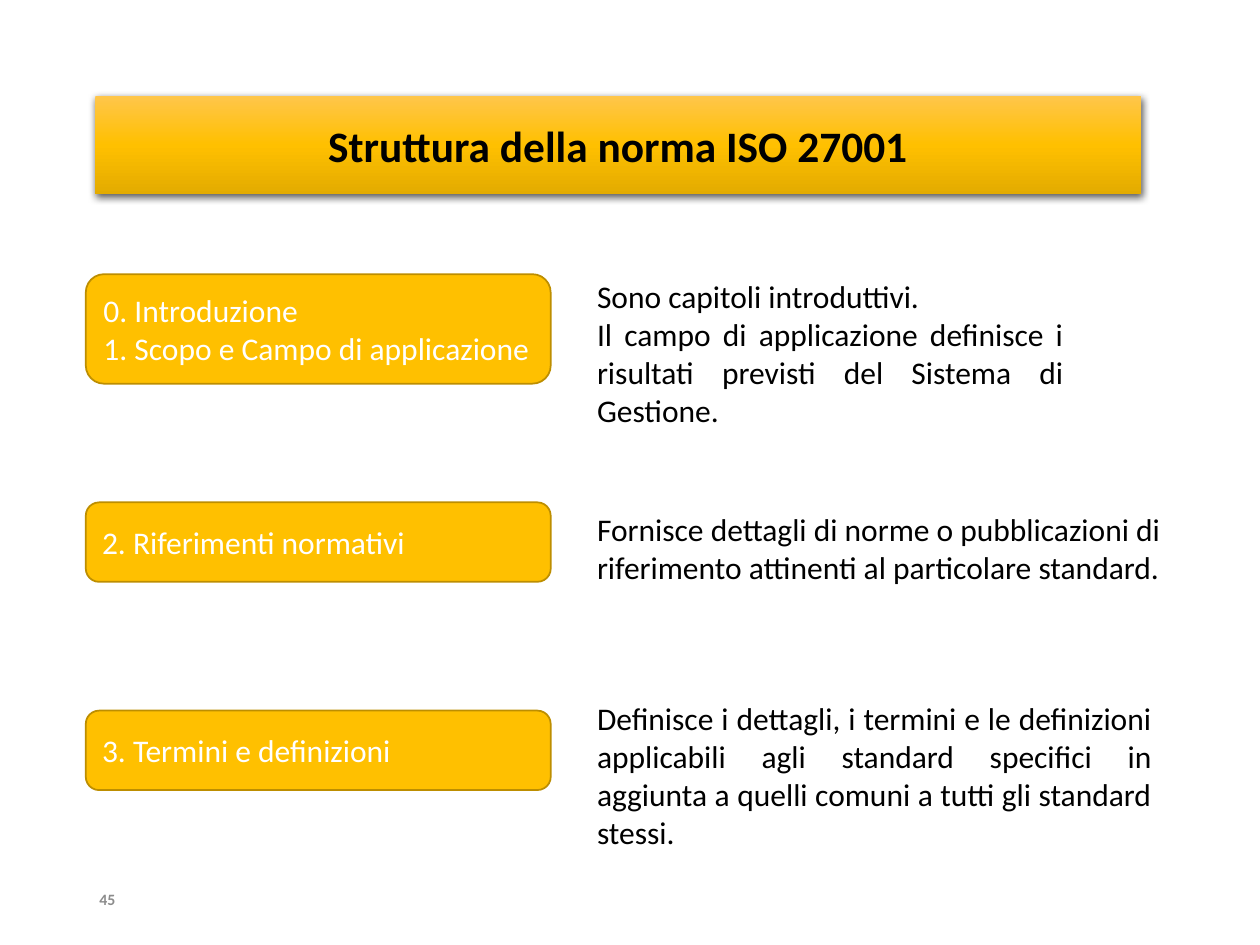
from pptx import Presentation
from pptx.dml.color import RGBColor
from pptx.enum.shapes import MSO_SHAPE
from pptx.enum.text import MSO_ANCHOR, MSO_AUTO_SIZE, PP_ALIGN
from pptx.oxml import parse_xml
from pptx.oxml.ns import nsdecls
from pptx.util import Pt

ROUNDED = MSO_SHAPE.ROUNDED_RECTANGLE
TOP, MIDDLE = MSO_ANCHOR.TOP, MSO_ANCHOR.MIDDLE
LEFT, CENTER, JUSTIFY = PP_ALIGN.LEFT, PP_ALIGN.CENTER, PP_ALIGN.JUSTIFY
NO_AUTOFIT = MSO_AUTO_SIZE.NONE

FONT = "Calibri"
AMBER, AMBER_EDGE = "FFC000", "BD8E00"
BLACK, WHITE, GRAY = "000000", "FFFFFF", "8C8C8C"
TITLE_GRADIENT = [(0, "FFC64B"), (50, AMBER), (100, "E3AB00")]

CHAPTER_LEFT, CHAPTER_WIDTH = 49, 265.7
NOTE_LEFT = 334.1

# Chapters: top, height, lines; notes: top, width, height, lines
SECTIONS = [
    ((156.7, 62.6, ["0. Introduzione", "1. Scopo e Campo di applicazione"]),
     (154.8, 280.8, 94.3, [
         "Sono capitoli introduttivi.",
         "Il campo di applicazione definisce i risultati previsti "
         "del Sistema di Gestione."])),
    ((287.1, 45.4, ["2. Riferimenti normativi"]),
     (288, 336.2, 72.7, [
         "Fornisce dettagli di norme o pubblicazioni di riferimento "
         "attinenti al particolare standard."])),
    ((406.1, 45.4, ["3. Termini e definizioni"]),
     (396, 331.2, 94.3, [
         "Definisce i dettagli, i termini e le definizioni applicabili agli "
         "standard specifici in aggiunta a quelli comuni a tutti gli "
         "standard stessi."])),
]


def color(hex_code):
    return RGBColor.from_string(hex_code)


def write(shape, lines, size=18, ink=BLACK, bold=False, align=LEFT, anchor=TOP):
    frame = shape.text_frame
    frame.word_wrap = True
    frame.auto_size = NO_AUTOFIT
    frame.vertical_anchor = anchor
    frame.text = "\n".join(lines)
    for paragraph in frame.paragraphs:
        paragraph.alignment = align
        font = paragraph.font
        font.name, font.size, font.bold = FONT, Pt(size), bold
        font.color.rgb = color(ink)


def add_title(slide, text):
    title = slide.shapes.title
    title.left, title.top, title.width, title.height = (
        Pt(54.5), Pt(54.7), Pt(597.6), Pt(56.2))
    write(title, [text], size=24.8, bold=True, align=CENTER, anchor=MIDDLE)
    # Vertical gradient and soft shadow below the banner
    stops = "".join(
        f'<a:gs pos="{position * 1000}"><a:srgbClr val="{tone}"/></a:gs>'
        for position, tone in TITLE_GRADIENT)
    properties = title.element.spPr
    properties.append(parse_xml(
        f'<a:gradFill {nsdecls("a")} rotWithShape="1"><a:gsLst>{stops}</a:gsLst>'
        '<a:lin ang="5400000" scaled="0"/></a:gradFill>'))
    properties.append(parse_xml(
        f'<a:effectLst {nsdecls("a")}><a:outerShdw blurRad="{Pt(4.5)}" '
        f'dist="{Pt(1.5)}" dir="5400000" rotWithShape="0">'
        f'<a:srgbClr val="{BLACK}"><a:alpha val="63000"/></a:srgbClr>'
        '</a:outerShdw></a:effectLst>'))


def add_chapter(slide, top, height, lines):
    chapter = slide.shapes.add_shape(
        ROUNDED, Pt(CHAPTER_LEFT), Pt(top), Pt(CHAPTER_WIDTH), Pt(height))
    chapter.shadow.inherit = False
    chapter.fill.solid()
    chapter.fill.fore_color.rgb = color(AMBER)
    chapter.line.color.rgb = color(AMBER_EDGE)
    chapter.line.width = Pt(1)
    write(chapter, lines, ink=WHITE, anchor=MIDDLE)


def add_text(slide, left, top, width, height, lines, **text_format):
    box = slide.shapes.add_textbox(Pt(left), Pt(top), Pt(width), Pt(height))
    write(box, lines, **text_format)


def main():
    deck = Presentation()
    deck.slide_width, deck.slide_height = Pt(720), Pt(540)
    slide = deck.slides.add_slide(deck.slide_layouts[5])

    add_title(slide, "Struttura della norma ISO 27001")

    # Each chapter with its explanation beside it
    for chapter, (top, width, height, lines) in SECTIONS:
        add_chapter(slide, *chapter)
        add_text(slide, NOTE_LEFT, top, width, height, lines, align=JUSTIFY)

    # Page number
    add_text(slide, 49.7, 499.7, 100.8, 28.8, ["45"],
             size=9, ink=GRAY, bold=True, anchor=MIDDLE)

    deck.save("out.pptx")


if __name__ == "__main__":
    main()
